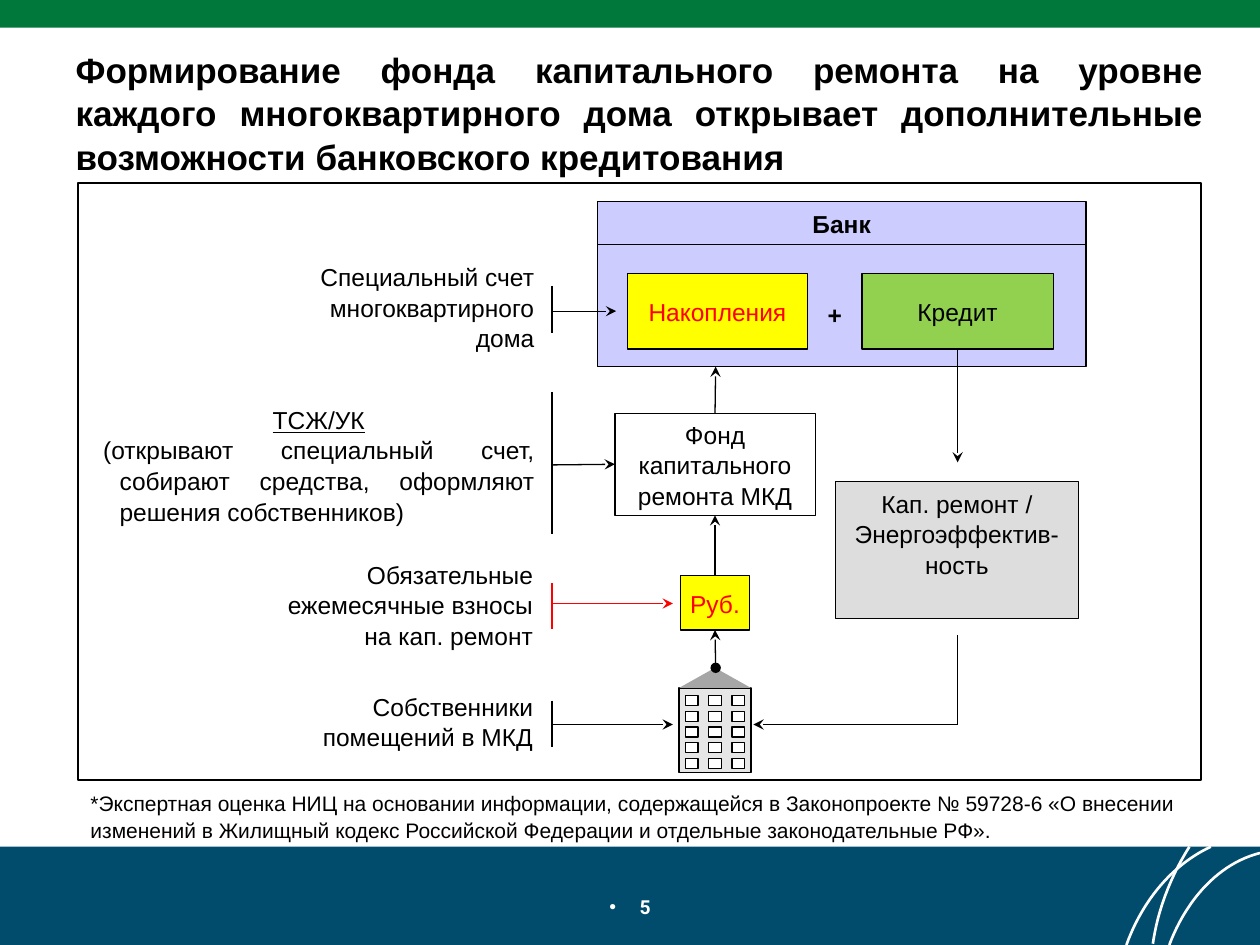
from lxml.etree import SubElement
from pptx import Presentation
from pptx.dml.color import RGBColor
from pptx.enum.shapes import MSO_CONNECTOR, MSO_SHAPE
from pptx.enum.text import MSO_ANCHOR, MSO_AUTO_SIZE, PP_ALIGN
from pptx.oxml.ns import qn
from pptx.util import Inches, Pt

BLACK, WHITE, RED, YELLOW, LILAC = "000000", "FFFFFF", "FF0000", "FFFF00", "CCCCFF"


def color(value):
    return RGBColor.from_string(value)


def bezier(start, control1, control2, end, steps=24):
    """Points along a cubic curve."""
    points = []
    for step in range(steps + 1):
        t = step / steps
        weights = ((1 - t) ** 3, 3 * t * (1 - t) ** 2, 3 * t * t * (1 - t), t ** 3)
        corners = (start, control1, control2, end)
        points.append(tuple(Inches(sum(w * c[axis] for w, c in zip(weights, corners)))
                            for axis in (0, 1)))
    return points


class Diagram:
    font = "Arial"
    size = 14
    line_width = 0.75
    line_spacing = 1.04

    def __init__(self, slide):
        self.slide = slide
        self.shapes = slide.shapes

    def box(self, left, top, width, height, fill, line=BLACK, line_width=None,
            kind=MSO_SHAPE.RECTANGLE):
        shape = self.shapes.add_shape(
            kind, Inches(left), Inches(top), Inches(width), Inches(height))
        shape.shadow.inherit = False
        shape.fill.solid()
        shape.fill.fore_color.rgb = color(fill)
        if line:
            shape.line.color.rgb = color(line)
            shape.line.width = Pt(line_width or self.line_width)
        else:
            shape.line.fill.background()
        return shape

    def frame(self, shape, anchor=MSO_ANCHOR.MIDDLE, wrap=True):
        text = shape.text_frame
        text.auto_size = MSO_AUTO_SIZE.NONE
        text.word_wrap = wrap
        text.vertical_anchor = anchor
        return text

    def add_words(self, paragraph, words, align=PP_ALIGN.CENTER, ink=BLACK, size=None,
                  bold=False, underline=False, font=None):
        paragraph.alignment = align
        paragraph.line_spacing = self.line_spacing
        paragraph.space_before = Pt(0)
        run = paragraph.add_run()
        run.text = words
        run.font.name = font or self.font
        run.font.size = Pt(size or self.size)
        run.font.bold = bold
        run.font.underline = underline
        run.font.color.rgb = color(ink)

    def label_box(self, words, place, fill, anchor=MSO_ANCHOR.MIDDLE, wrap=True, **style):
        shape = self.box(*place, fill)
        self.add_words(self.frame(shape, anchor, wrap).paragraphs[0], words, **style)
        return shape

    def text_frame(self, place, anchor=MSO_ANCHOR.MIDDLE):
        return self.frame(self.shapes.add_textbox(*map(Inches, place)), anchor)

    def text(self, words, place, anchor=MSO_ANCHOR.MIDDLE, **style):
        self.add_words(self.text_frame(place, anchor).paragraphs[0], words, **style)

    def line(self, start, end, ink=BLACK, head=None, tail=None):
        connector = self.shapes.add_connector(
            MSO_CONNECTOR.STRAIGHT, *map(Inches, start + end))
        connector.line.color.rgb = color(ink)
        connector.line.width = Pt(self.line_width)
        outline = connector.line._get_or_add_ln()
        for tag, arrowhead in (("a:headEnd", head), ("a:tailEnd", tail)):
            if arrowhead:
                SubElement(outline, qn(tag)).set("type", arrowhead)
        SubElement(connector._element.spPr, qn("a:effectLst"))
        return connector

    def arrow(self, start, end, **style):
        return self.line(start, end, tail="stealth", **style)

    def arcs(self, *curves):
        builder = self.shapes.build_freeform(*curves[0][0], scale=1.0)
        for index, curve in enumerate(curves):
            if index:
                builder.move_to(*curve[0])
            builder.add_line_segments(curve[1:], close=False)
        shape = builder.convert_to_shape()
        shape.shadow.inherit = False
        shape.fill.background()
        shape.line.color.rgb = color(WHITE)
        shape.line.width = Pt(1.5)


def hang(paragraph, indent):
    properties = paragraph._p.get_or_add_pPr()
    properties.set("marL", str(Inches(indent)))
    properties.set("indent", str(-Inches(indent)))
    return properties


def add_bullet(paragraph, indent):
    properties = hang(paragraph, indent)
    SubElement(properties, qn("a:buFont")).set("typeface", "Arial")
    SubElement(properties, qn("a:buChar")).set("char", "•")


def main():
    presentation = Presentation()
    presentation.slide_width, presentation.slide_height = Inches(10), Inches(7.5)
    slide = presentation.slides.add_slide(presentation.slide_layouts[5])
    diagram = Diagram(slide)

    # Top and bottom bands with white arcs
    diagram.box(0, 6.72, 10, 0.78, "014C6D", line=None)
    diagram.arcs(bezier((9.61, 6.72), (9.31, 6.86), (9.07, 7.14), (8.94, 7.5)))
    diagram.arcs(bezier((10, 6.77), (9.68, 6.85), (9.42, 7.13), (9.28, 7.5)),
                 bezier((9.44, 6.72), (9.3, 6.94), (9.19, 7.21), (9.15, 7.49)))
    diagram.box(0, 0, 10, 0.22, "00783C", line=None)

    # Title
    title = slide.shapes.title
    title.left, title.top, title.width, title.height = map(Inches, (0.5, 0.32, 9.15, 1.11))
    diagram.add_words(diagram.frame(title, MSO_ANCHOR.TOP).paragraphs[0],
                      "Формирование фонда капитального ремонта на уровне каждого "
                      "многоквартирного дома открывает дополнительные возможности "
                      "банковского кредитования",
                      align=PP_ALIGN.JUSTIFY, size=20, bold=True)

    # Page number
    page_number = diagram.text_frame((3.97, 7.04, 2.06, 0.31)).paragraphs[0]
    add_bullet(page_number, 0.24)
    diagram.add_words(page_number, "5", ink=WHITE, size=11, bold=True, font="Roboto")

    # Scheme area and bank
    diagram.box(0.62, 1.45, 8.91, 4.74, WHITE, line_width=1)
    diagram.box(4.74, 1.94, 3.88, 0.97, LILAC)
    diagram.label_box("Банк", (4.74, 1.6, 3.88, 0.34), LILAC, bold=True)
    diagram.label_box("Накопления", (4.98, 2.17, 1.43, 0.6), YELLOW, wrap=False, ink=RED)
    diagram.text("+", (6.4, 2.32, 0.45, 0.34), bold=True)
    credit = diagram.label_box("Кредит", (6.84, 2.17, 1.52, 0.6), "92D050")

    # Fund, contributions and repair
    fund = diagram.label_box("Фонд капитального ремонта МКД",
                             (4.88, 3.28, 1.59, 0.81), WHITE)
    rubles = diagram.label_box("Руб.", (5.4, 4.57, 0.55, 0.43), YELLOW, wrap=False, ink=RED)
    diagram.label_box("Кап. pемонт / Энергоэффектив-ность",
                      (6.63, 3.82, 1.93, 1.09), "DDDDDD", anchor=MSO_ANCHOR.TOP)

    # Apartment house
    diagram.box(5.39, 5.46, 0.57, 0.67, "E6E6E6")
    for floor in range(5):
        for column in range(3):
            diagram.box(5.44 + 0.185 * column, 5.52 + 0.125 * floor, 0.1, 0.08, WHITE)
    diagram.box(5.39, 5.3, 0.57, 0.16, "A6A6A6", line=None,
                kind=MSO_SHAPE.FLOWCHART_EXTRACT)

    # Flow of money upwards
    flow_x, credit_x = 5.68, 7.6
    diagram.arrow((flow_x, 5.3), (flow_x, 5), head="oval").end_connect(rubles, 2)
    to_fund = diagram.arrow((flow_x, 4.57), (flow_x, 4.09))
    to_fund.begin_connect(rubles, 0)
    to_fund.end_connect(fund, 2)
    diagram.arrow((flow_x, 3.28), (flow_x, 2.91)).begin_connect(fund, 0)

    # Credit to repair and back to the house
    diagram.arrow((credit_x, 2.77), (credit_x, 3.67)).begin_connect(credit, 2)
    diagram.line((credit_x, 5.04), (credit_x, 5.75))
    diagram.arrow((credit_x, 5.75), (5.98, 5.75))

    # Captions on the left
    captions = (
        ("Специальный счет многоквартирного дома", (2.08, 2.03, 2.26, 0.81)),
        ("Обязательные ежемесячные взносы на кап. ремонт", (2.07, 4.39, 2.26, 0.81)),
        ("Собственники помещений в МКД", (2.27, 5.44, 2.06, 0.57)),
    )
    for words, place in captions:
        diagram.text(words, place, align=PP_ALIGN.RIGHT)

    managers = diagram.text_frame((0.72, 3.17, 3.62, 1.04))
    heading, duties = managers.paragraphs[0], managers.add_paragraph()
    for paragraph in (heading, duties):
        hang(paragraph, 0.13)
    diagram.add_words(heading, "ТСЖ/УК", underline=True)
    diagram.add_words(duties, "(открывают специальный счет, собирают средства, "
                      "оформляют решения собственников)", align=PP_ALIGN.JUSTIFY)

    # Brackets: top, bottom, arrow height, arrow end, colour, joined box
    bracket_x = 4.38
    brackets = (
        (2.27, 2.64, 2.47, 4.89, BLACK, None),
        (3.11, 4.24, 3.69, 4.88, BLACK, fund),
        (4.63, 4.99, 4.79, 5.34, RED, None),
        (5.56, 5.93, 5.75, 5.34, BLACK, None),
    )
    for top, bottom, arrow_y, arrow_end, ink, target in brackets:
        diagram.line((bracket_x, top), (bracket_x, bottom), ink=ink)
        pointer = diagram.arrow((bracket_x, arrow_y), (arrow_end, arrow_y), ink=ink)
        if target:
            pointer.end_connect(target, 1)

    # Footnote
    diagram.text("*Экспертная оценка НИЦ на основании информации, содержащейся в "
                 "Законопроекте № 59728-6 «О внесении изменений в Жилищный кодекс "
                 "Российской Федерации и отдельные законодательные РФ».",
                 (0.62, 6.22, 8.87, 0.5), anchor=MSO_ANCHOR.TOP,
                 align=PP_ALIGN.LEFT, size=12)

    presentation.save("out.pptx")


if __name__ == "__main__":
    main()
